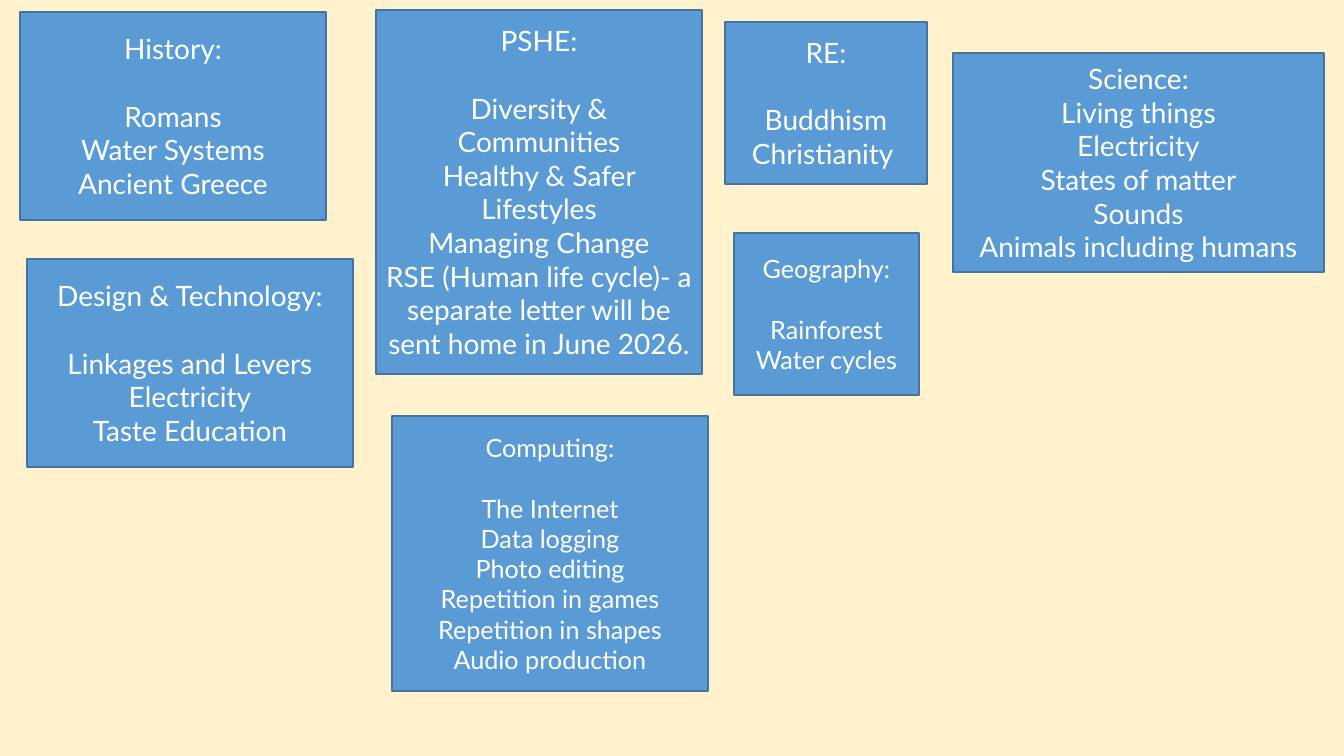
from dataclasses import dataclass

from pptx import Presentation
from pptx.dml.color import RGBColor
from pptx.enum.shapes import MSO_SHAPE
from pptx.enum.text import MSO_ANCHOR, PP_ALIGN
from pptx.util import Pt

RECTANGLE = MSO_SHAPE.RECTANGLE
MIDDLE = MSO_ANCHOR.MIDDLE
CENTER = PP_ALIGN.CENTER

SLIDE_WIDTH, SLIDE_HEIGHT = 1344, 756  # px
EMU_PER_PX = 12192000 / SLIDE_WIDTH
BLANK_LAYOUT = 6


@dataclass(frozen=True)
class Theme:
    background: RGBColor = RGBColor(0xFF, 0xF2, 0xCC)
    box: RGBColor = RGBColor(0x5B, 0x9B, 0xD5)
    outline: RGBColor = RGBColor(0x43, 0x73, 0x9E)
    text: RGBColor = RGBColor(0xFF, 0xFF, 0xFF)
    font: str = "Lato"
    large: int = 20
    small: int = 18
    line_height: float = 1.2
    outline_width: int = 1


THEME = Theme()

# Subject, (left, top, width, height) in px, type size, blank line after heading, topics
SUBJECTS = [
    ("History:", (20, 12, 306, 208), THEME.large, True,
     ["Romans", "Water Systems", "Ancient Greece"]),
    ("RE:", (725, 22, 202, 162), THEME.large, True,
     ["Buddhism", "Christianity "]),
    ("PSHE:", (376, 10, 326, 364), THEME.large, True,
     ["Diversity & Communities", "Healthy & Safer Lifestyles", "Managing Change",
      "RSE (Human life cycle)- a separate letter will be sent home in June 2026."]),
    ("Design & Technology:", (27, 259, 326, 208), THEME.large, True,
     ["Linkages and Levers", "Electricity", "Taste Education"]),
    ("Science:", (953, 53, 371, 219), THEME.large, False,
     ["Living things", "Electricity", "States of matter", "Sounds",
      "Animals including humans"]),
    ("Computing:", (392, 416, 316, 275), THEME.small, True,
     ["The Internet", "Data logging", "Photo editing", "Repetition in games",
      "Repetition in shapes", "Audio production"]),
    ("Geography:", (734, 233, 185, 162), THEME.small, True,
     ["Rainforest", "Water cycles"]),
]


def emu(px):
    return round(px * EMU_PER_PX)


def set_attributes(target, values):
    for name, value in values.items():
        setattr(target, name, value)


class SlideBuilder:
    def __init__(self, slide, theme):
        self.slide = slide
        self.theme = theme

    def background(self):
        fill = self.slide.background.fill
        fill.solid()
        fill.fore_color.rgb = self.theme.background

    def subject_box(self, heading, bounds, size, spaced, topics):
        theme = self.theme
        shape = self.slide.shapes.add_shape(RECTANGLE, *map(emu, bounds))
        shape.shadow.inherit = False
        shape.fill.solid()
        shape.fill.fore_color.rgb = theme.box
        shape.line.color.rgb = theme.outline
        shape.line.width = Pt(theme.outline_width)
        set_attributes(shape.text_frame, {"word_wrap": True, "vertical_anchor": MIDDLE})

        shape.text_frame.text = "\n".join([heading, *topics])
        paragraphs = shape.text_frame.paragraphs
        for paragraph in paragraphs:
            paragraph.alignment = CENTER
            for run in paragraph.runs:
                set_attributes(run.font, {"name": theme.font, "size": Pt(size)})
                run.font.color.rgb = theme.text
        if spaced:
            paragraphs[0].space_after = Pt(size * theme.line_height)


def main():
    presentation = Presentation()
    set_attributes(presentation, {"slide_width": emu(SLIDE_WIDTH),
                                  "slide_height": emu(SLIDE_HEIGHT)})
    slide = presentation.slides.add_slide(presentation.slide_layouts[BLANK_LAYOUT])
    builder = SlideBuilder(slide, THEME)
    builder.background()
    for subject in SUBJECTS:
        builder.subject_box(*subject)
    presentation.save("out.pptx")


if __name__ == "__main__":
    main()
